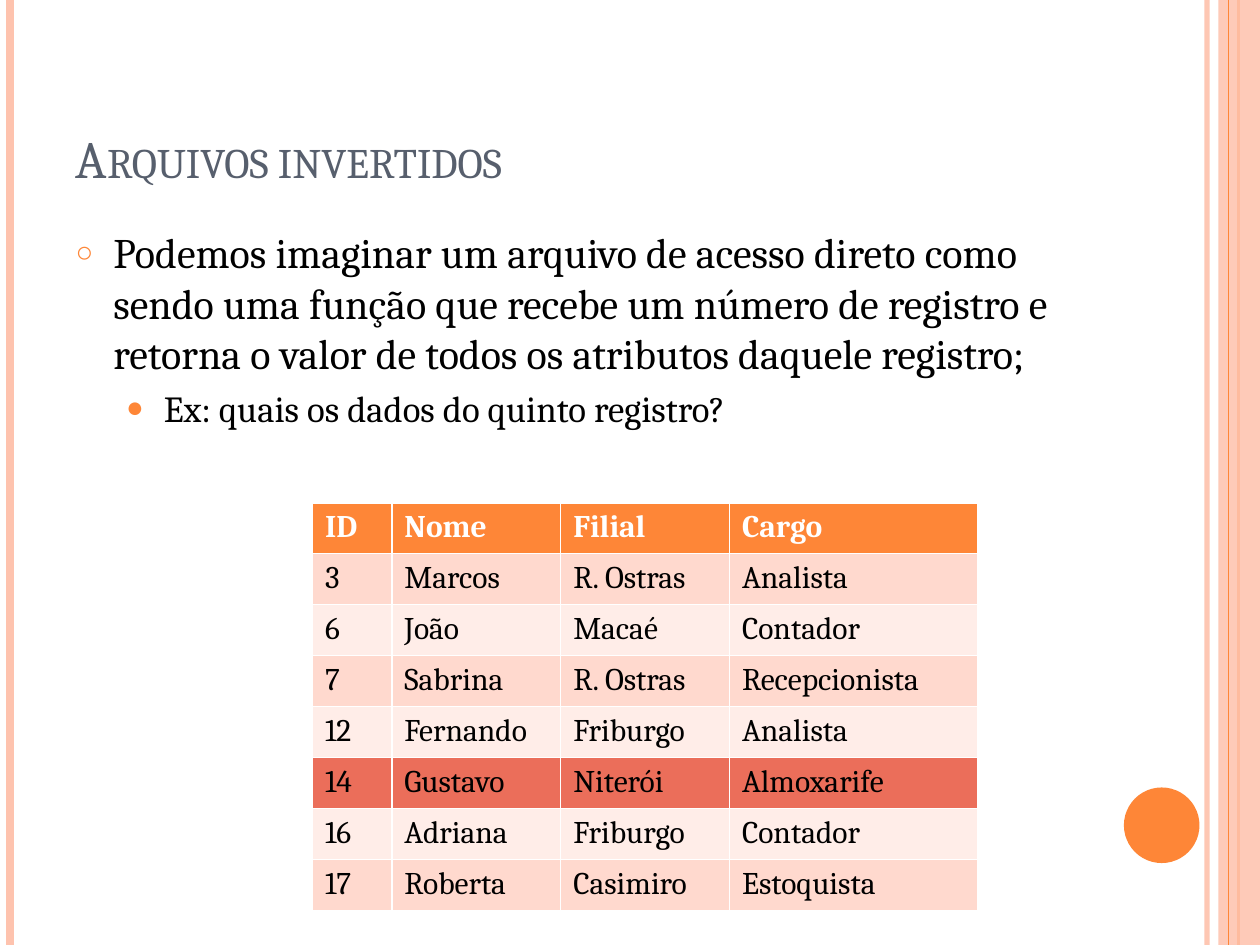
import pptx
import pptx.util
import pptx.dml.color
import pptx.enum.shapes
import pptx.enum.text
import pptx.oxml.ns
from lxml import etree
from pptx.util import Inches

ORANGE = "FE8637"
PEACH = "FEC3AE"
BLACK = "000000"


def rgb(value):
    return pptx.dml.color.RGBColor.from_string(value)


def add_xml(parent, tag, **attributes):
    return etree.SubElement(parent, pptx.oxml.ns.qn(tag), attributes)


class SlideBuilder:
    font_name = "Cambria"

    def __init__(self, slide):
        self.slide = slide

    def style(self, paragraph, size, color, bold=False):
        paragraph.font.name = self.font_name
        paragraph.font.size = pptx.util.Pt(size)
        paragraph.font.bold = bold
        paragraph.font.color.rgb = rgb(color)

    def set_opacity(self, fill, element, percent):
        fill.fore_color.rgb = rgb(PEACH)
        color = element.find(".//" + pptx.oxml.ns.qn("a:srgbClr"))
        add_xml(color, "a:alpha", val=str(percent * 1000))

    def vertical_line(self, x, color, width, opacity=None):
        line = self.slide.shapes.add_connector(
            pptx.enum.shapes.MSO_CONNECTOR.STRAIGHT, Inches(x), 0, Inches(x), Inches(7.5))
        line.line.color.rgb = rgb(color)
        line.line.width = pptx.util.Pt(width)
        properties = line._element.spPr
        if opacity:
            self.set_opacity(line.line.fill, properties, opacity)
        add_xml(properties, "a:effectLst")

    def shape(self, kind, left, top, width, height, color, opacity=None):
        shape = self.slide.shapes.add_shape(
            kind, Inches(left), Inches(top), Inches(width), Inches(height))
        shape.shadow.inherit = False
        shape.fill.solid()
        shape.fill.fore_color.rgb = rgb(color)
        shape.line.fill.background()
        if opacity:
            self.set_opacity(shape.fill, shape._element.spPr, opacity)

    def place(self, holder, left, top, width, height, anchor):
        holder.left, holder.top = Inches(left), Inches(top)
        holder.width, holder.height = Inches(width), Inches(height)
        holder.text_frame.auto_size = pptx.enum.text.MSO_AUTO_SIZE.NONE
        holder.text_frame.vertical_anchor = anchor

    def title(self, text):
        heading = self.slide.shapes.title
        self.place(heading, 0.5, 0.3, 8.17, 1.25, pptx.enum.text.MSO_ANCHOR.BOTTOM)
        heading.text_frame.text = text
        paragraph = heading.text_frame.paragraphs[0]
        paragraph.alignment = pptx.enum.text.PP_ALIGN.LEFT
        self.style(paragraph, 30, "575F6D")
        paragraph._p.pPr.get_or_add_defRPr().set("cap", "small")

    def bullets(self, items):
        body = self.slide.placeholders[1]
        self.place(body, 0.5, 1.75, 8.17, 5.33, pptx.enum.text.MSO_ANCHOR.TOP)
        body.text_frame.text = "\n".join(item[0] for item in items)
        for paragraph, item in zip(body.text_frame.paragraphs, items):
            text, level, indent, mark, mark_size, size = item
            paragraph.level = level
            properties = paragraph._p.get_or_add_pPr()
            properties.set("marL", str(Inches(indent)))
            properties.set("indent", str(Inches(-0.3)))
            add_xml(add_xml(properties, "a:buClr"), "a:srgbClr", val=ORANGE)
            add_xml(properties, "a:buSzPct", val=str(mark_size * 1000))
            add_xml(properties, "a:buChar", char=mark)
            self.style(paragraph, size, BLACK)
        body.text_frame.paragraphs[0].space_before = pptx.util.Pt(0)

    def table(self, left, top, widths, row_height, rows, fills):
        frame = self.slide.shapes.add_table(
            len(rows), len(widths), Inches(left), Inches(top),
            Inches(sum(widths)), Inches(row_height * len(rows)))
        for column, width in zip(frame.table.columns, widths):
            column.width = Inches(width)
        for index, (row, values) in enumerate(zip(frame.table.rows, rows)):
            is_header = index == 0
            for cell, value in zip(row.cells, values):
                cell.text = value
                cell.fill.solid()
                cell.fill.fore_color.rgb = rgb(fills[index])
                self.style(cell.text_frame.paragraphs[0], 18,
                           "FFFFFF" if is_header else BLACK, is_header)


def main():
    presentation = pptx.Presentation()
    presentation.slide_width, presentation.slide_height = Inches(10), Inches(7.5)
    builder = SlideBuilder(presentation.slides.add_slide(presentation.slide_layouts[1]))

    builder.vertical_line(9.58, PEACH, 3, 93)
    builder.vertical_line(0.08, PEACH, 4.5)
    builder.vertical_line(9.83, ORANGE, 1.5)
    shapes = pptx.enum.shapes.MSO_SHAPE
    builder.shape(shapes.RECTANGLE, 9.67, 0, 0.33, 7.5, PEACH, 87)
    builder.vertical_line(9.75, ORANGE, 0.75)
    builder.shape(shapes.OVAL, 8.92, 6.25, 0.6, 0.6, ORANGE)

    builder.title("Arquivos invertidos")
    builder.bullets([
        ("Podemos imaginar um arquivo de acesso direto como sendo uma função que recebe "
         "um número de registro e retorna o valor de todos os atributos daquele registro;",
         0, 0.3, "○", 70, 24),
        ("Ex: quais os dados do quinto registro?", 1, 0.7, "●", 80, 21),
    ])

    employees = [
        ("ID", "Nome", "Filial", "Cargo"),
        ("3", "Marcos", "R. Ostras", "Analista"),
        ("6", "João", "Macaé", "Contador"),
        ("7", "Sabrina", "R. Ostras", "Recepcionista"),
        ("12", "Fernando", "Friburgo", "Analista"),
        ("14", "Gustavo", "Niterói", "Almoxarife"),
        ("16", "Adriana", "Friburgo", "Contador"),
        ("17", "Roberta", "Casimiro", "Estoquista"),
    ]
    fills = [ORANGE] + ["FFD9CE", "FFEDE8"] * 3 + ["FFD9CE"]
    fifth_record = 5
    fills[fifth_record] = "EB6E5A"
    builder.table(2.48, 3.99, (0.63, 1.34, 1.34, 1.97), 3.24 / 8, employees, fills)

    presentation.save("out.pptx")


if __name__ == "__main__":
    main()
